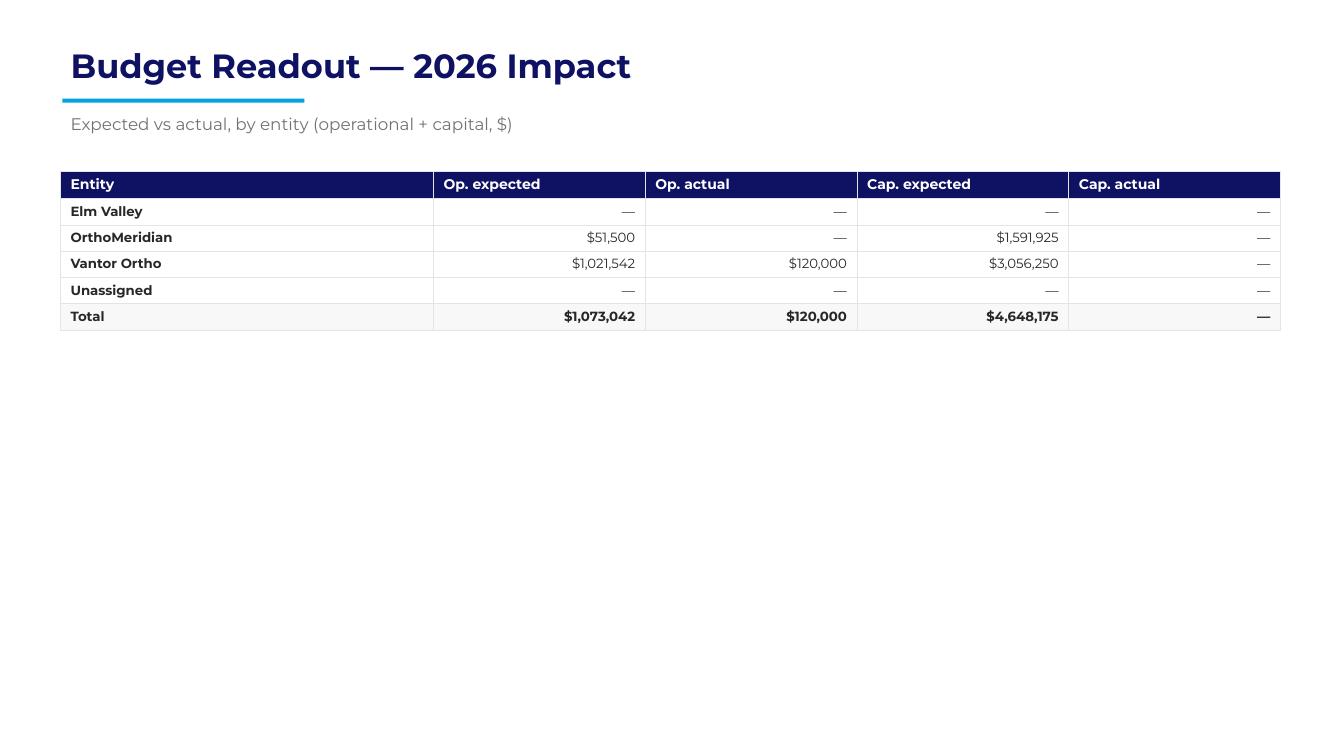
import pptx
import pptx.util
import pptx.dml.color
import pptx.enum.shapes
import pptx.enum.text
import pptx.oxml.ns
import lxml.etree

Inches = pptx.util.Inches
RGBColor = pptx.dml.color.RGBColor
ALIGN = pptx.enum.text.PP_ALIGN

NAVY = RGBColor(0x0F, 0x12, 0x63)
CYAN = RGBColor(0x00, 0xA3, 0xE0)
GRAY = RGBColor(0x70, 0x73, 0x72)
INK = RGBColor(0x27, 0x27, 0x2A)
WHITE = RGBColor(0xFF, 0xFF, 0xFF)
PALE = RGBColor(0xF8, 0xF8, 0xF8)
BORDER = RGBColor(0xE4, 0xE4, 0xE7)

LEFT = 0.6
COLUMN_WIDTHS = [3.7] + [2.1] * 4
HEADER_HEIGHT, ROW_HEIGHT = 0.27, 0.26

ROWS = [
    ["Entity", "Op. expected", "Op. actual", "Cap. expected", "Cap. actual"],
    ["Elm Valley", "—", "—", "—", "—"],
    ["OrthoMeridian", "$51,500", "—", "$1,591,925", "—"],
    ["Vantor Ortho", "$1,021,542", "$120,000", "$3,056,250", "—"],
    ["Unassigned", "—", "—", "—", "—"],
    ["Total", "$1,073,042", "$120,000", "$4,648,175", "—"],
]


def write_text(text_frame, text, size, color, bold, alignment):
    text_frame.text = text
    paragraph = text_frame.paragraphs[0]
    paragraph.alignment = alignment
    paragraph.space_before = pptx.util.Pt(0)
    font = paragraph.runs[0].font
    font.color.rgb = color
    formats = {"name": "Montserrat", "size": pptx.util.Pt(size), "bold": bold}
    for name, value in formats.items():
        setattr(font, name, value)


def add_borders(cell):
    properties = cell._tc.get_or_add_tcPr()
    for position, side in enumerate(("lnL", "lnR", "lnT", "lnB")):
        line = lxml.etree.Element(pptx.oxml.ns.qn("a:" + side), w=str(pptx.util.Pt(0.5)))
        fill = lxml.etree.SubElement(line, pptx.oxml.ns.qn("a:solidFill"))
        lxml.etree.SubElement(fill, pptx.oxml.ns.qn("a:srgbClr"), val=str(BORDER))
        properties.insert(position, line)


presentation = pptx.Presentation()
presentation.slide_width = Inches(13.33)
presentation.slide_height = Inches(7.5)
slide = presentation.slides.add_slide(presentation.slide_layouts[0])

headings = [
    (slide.shapes.title, "Budget Readout — 2026 Impact", 0.35, 0.6, 24, NAVY, True),
    (slide.placeholders[1], "Expected vs actual, by entity (operational + capital, $)",
     1.05, 0.35, 12, GRAY, False),
]
for shape, text, top, height, size, color, bold in headings:
    place = {"left": LEFT, "top": top, "width": 12.13, "height": height}
    for name, value in place.items():
        setattr(shape, name, Inches(value))
    write_text(shape.text_frame, text, size, color, bold, ALIGN.LEFT)
    frame_formats = {
        "word_wrap": True,
        "auto_size": pptx.enum.text.MSO_AUTO_SIZE.NONE,
        "vertical_anchor": pptx.enum.text.MSO_ANCHOR.MIDDLE,
    }
    for name, value in frame_formats.items():
        setattr(shape.text_frame, name, value)

accent = slide.shapes.add_shape(
    pptx.enum.shapes.MSO_SHAPE.RECTANGLE,
    Inches(0.62), Inches(0.98), Inches(2.4), Inches(0.04))
accent.shadow.inherit = False
accent.fill.solid()
accent.fill.fore_color.rgb = CYAN
accent.line.fill.background()

last_row = len(ROWS) - 1
table = slide.shapes.add_table(
    len(ROWS), len(COLUMN_WIDTHS), Inches(LEFT), Inches(1.7),
    Inches(sum(COLUMN_WIDTHS)), Inches(HEADER_HEIGHT + last_row * ROW_HEIGHT)).table
table.horz_banding = False
for column, width in zip(table.columns, COLUMN_WIDTHS):
    column.width = Inches(width)

for row_index, values in enumerate(ROWS):
    is_header = row_index == 0
    is_total = row_index == last_row
    table.rows[row_index].height = Inches(HEADER_HEIGHT if is_header else ROW_HEIGHT)
    for column_index, value in enumerate(values):
        is_label = column_index == 0
        cell = table.cell(row_index, column_index)
        write_text(
            cell.text_frame, value,
            10 if is_header else 9.5,
            WHITE if is_header else INK,
            is_header or is_total or is_label,
            ALIGN.LEFT if is_header or is_label else ALIGN.RIGHT)
        cell.fill.solid()
        cell.fill.fore_color.rgb = NAVY if is_header else PALE if is_total else WHITE
        add_borders(cell)

presentation.save("out.pptx")
